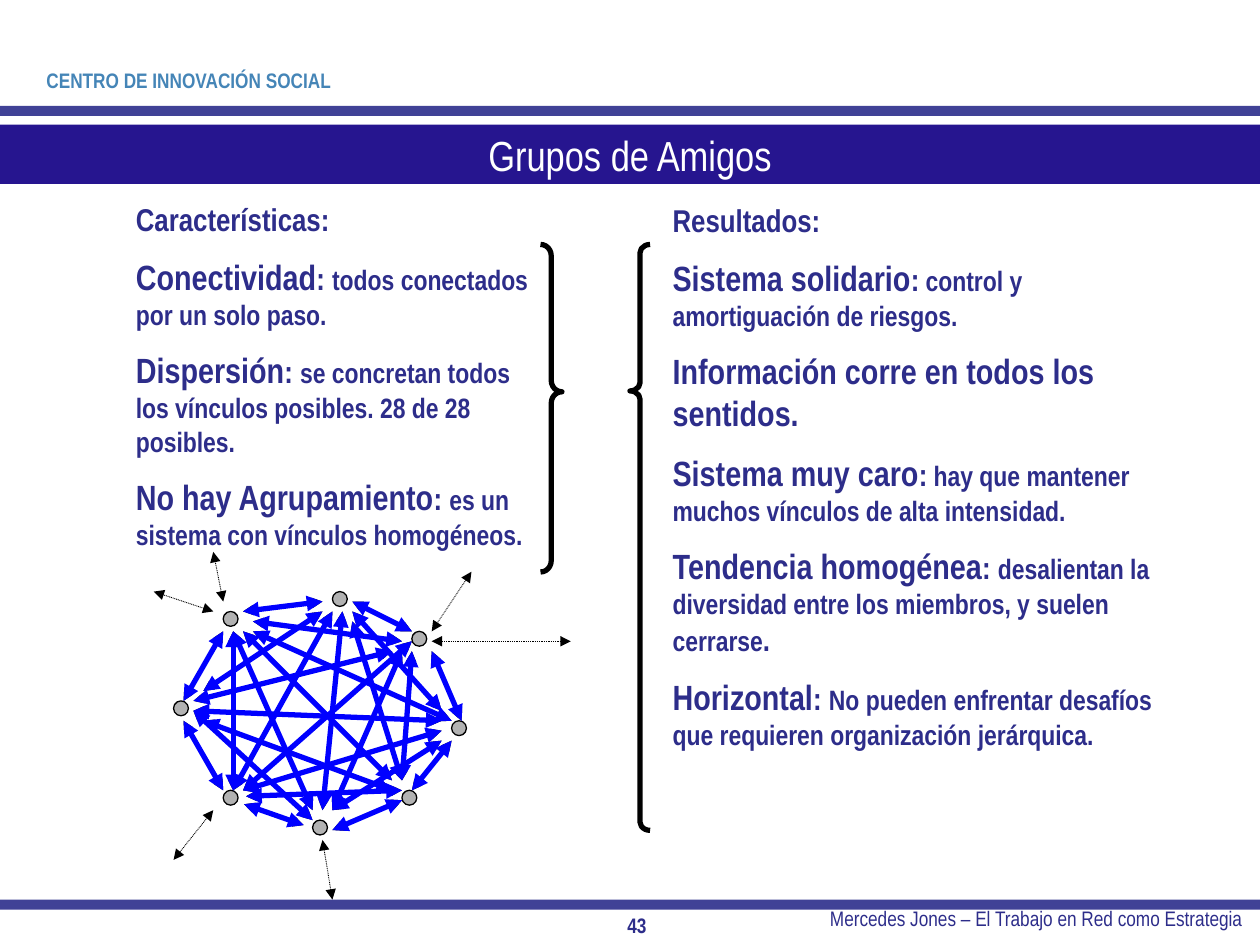
from collections import namedtuple

from lxml.etree import SubElement
from pptx import Presentation
from pptx.dml.color import RGBColor
from pptx.enum.dml import MSO_LINE
from pptx.enum.shapes import MSO_CONNECTOR, MSO_SHAPE
from pptx.enum.text import MSO_ANCHOR, MSO_AUTO_SIZE, PP_ALIGN
from pptx.oxml.ns import qn
from pptx.util import Inches, Pt

Box = namedtuple("Box", "left top width height")

UNIT = 0.1
COLUMNS, ROWS = 100, 75
NETWORK_COLUMNS, NETWORK_ROWS = 42, 35
NODE_SIZE = 1.5
FONT = "Arial Narrow"
COLORS = {
    "rule": "404296",
    "brand": "4585B7",
    "banner": "26158F",
    "text": "2D2D8A",
    "white": "FFFFFF",
    "node": "B2B2B2",
    "black": "000000",
    "link": "0000FF",
}

FEATURES = [
    [("Características:", 18)],
    [("Conectividad", 20), (": ", 18), ("todos conectados por un solo paso.", 16)],
    [("Dispersión", 20), (": ", 18),
     ("se concretan todos los vínculos posibles. 28 de 28 posibles.", 16)],
    [("No hay Agrupamiento", 20), (": ", 18),
     ("es un sistema con vínculos homogéneos.", 16)],
]
RESULTS = [
    [("Resultados:", 18)],
    [("Sistema solidario", 20), (":", 18),
     (" control y amortiguación de riesgos.", 16)],
    [("Información corre en todos los sentidos.", 20)],
    [("Sistema muy caro", 20), (":", 18),
     (" hay que mantener muchos vínculos de alta intensidad.", 16)],
    [("Tendencia homogénea", 20), (": ", 18),
     ("desalientan la diversidad entre los miembros, y suelen cerrarse", 16),
     (".", 18)],
    [("Horizontal", 20), (": ", 18),
     ("No pueden enfrentar desafíos que requieren organización jerárquica.", 16)],
]

NODES = [(7, 6), (26, 8), (18, 4), (2, 15), (16, 27), (25, 24), (30, 17), (7, 24)]
LINKS = [
    (8, 24, 18, 6), (7, 24, 3, 17), (8, 8, 8, 24), (15.1, 27.5, 9.1, 25.4),
    (25, 25, 18, 28), (9, 24, 26, 9), (29, 18, 9, 24), (17, 5, 9, 6),
    (25, 24, 9.3, 24.6), (3, 15, 7, 8), (20, 5, 26, 8), (30, 19, 26, 24),
    (28, 10, 31, 17), (4, 16, 16, 27), (29, 19, 18, 26), (25, 10, 18, 26),
    (8, 8, 16, 26), (19, 6, 17, 26), (17, 6, 5, 14), (24, 10, 4, 15),
    (24, 23, 9, 8), (24, 24, 5, 17), (29, 17, 4, 16), (26, 10, 25, 23),
    (30, 17, 10, 8), (25, 9, 10, 7), (20, 7, 25, 23), (29, 16, 20, 6),
]
OUTSIDE_LINKS = [
    (32, 2, 28, 8), (6, 26, 2, 31), (6, 6, 0, 4), (6, 0, 7, 5),
    (18, 35, 17, 29), (42, 9, 28, 9),
]


def color(name):
    return RGBColor.from_string(COLORS[name])


def grid(*lengths):
    return [Inches(length * UNIT) for length in lengths]


def add_figure(page, kind, box, fill=None, line=None, weight=0.75):
    figure = page.shapes.add_shape(kind, *grid(*box))
    figure.shadow.inherit = False
    if fill:
        figure.fill.solid()
        figure.fill.fore_color.rgb = color(fill)
    else:
        figure.fill.background()
    if line:
        figure.line.color.rgb = color(line)
        figure.line.width = Pt(weight)
    else:
        figure.line.fill.background()
    return figure


def write(frame, paragraphs, ink="text", bold=False, align=PP_ALIGN.LEFT,
          anchor=MSO_ANCHOR.TOP):
    frame.word_wrap = True
    frame.vertical_anchor = anchor
    for index, runs in enumerate(paragraphs):
        para = frame.add_paragraph() if index else frame.paragraphs[0]
        para.alignment = align
        if index:
            para.space_before = Pt(10)
        para.font.name = FONT
        para.font.bold = bold
        para.font.color.rgb = color(ink)
        sizes = {size for _, size in runs}
        if len(sizes) == 1:
            para.font.size = Pt(sizes.pop())
        for words, size in runs:
            span = para.add_run()
            span.text = words
            if para.font.size is None:
                span.font.size = Pt(size)


def add_label(page, box, paragraphs, **style):
    frame = page.shapes.add_textbox(*grid(*box)).text_frame
    write(frame, paragraphs, **style)
    return frame


def add_column(page, box, paragraphs):
    frame = add_label(page, box, paragraphs, bold=True)
    frame.auto_size = MSO_AUTO_SIZE.SHAPE_TO_FIT_TEXT


def add_brace(page, kind, box, curl, tip):
    brace = add_figure(page, kind, box, line="black", weight=3)
    brace.adjustments[0] = curl
    brace.adjustments[1] = tip


def add_arrow(page, ends, ink, weight, dash=None):
    arrow = page.shapes.add_connector(MSO_CONNECTOR.STRAIGHT, *grid(*ends))
    arrow.line.color.rgb = color(ink)
    arrow.line.width = Pt(weight)
    if dash:
        arrow.line.dash_style = dash
    properties = arrow._element.spPr
    outline = properties.find(qn("a:ln"))
    for end in ("a:headEnd", "a:tailEnd"):
        SubElement(outline, qn(end), type="triangle")
    SubElement(properties, qn("a:effectLst"))


def add_network(page, box):
    across = box.width / NETWORK_COLUMNS
    down = box.height / NETWORK_ROWS

    def point(column, row):
        return box.left + column * across, box.top + row * down

    def connect(links, *style):
        for x1, y1, x2, y2 in links:
            add_arrow(page, point(x1, y1) + point(x2, y2), *style)

    for node in NODES:
        disc = Box(*point(*node), NODE_SIZE * across, NODE_SIZE * down)
        add_figure(page, MSO_SHAPE.OVAL, disc, "node", "black")
    connect(LINKS + OUTSIDE_LINKS, "black", 0.5, MSO_LINE.ROUND_DOT)
    connect(LINKS, "link", 3)


def add_header(page, box):
    add_label(page, Box(2.7, 3.6, 24.8, 5.6),
              [[("CENTRO DE INNOVACIÓN SOCIAL", 12)]],
              ink="brand", bold=True, anchor=MSO_ANCHOR.MIDDLE)
    add_figure(page, MSO_SHAPE.RECTANGLE,
               Box(box.left, box.top + 8.4, box.width, 0.8), "rule")
    banner = add_figure(page, MSO_SHAPE.RECTANGLE,
                        Box(box.left, box.top + 9.9, box.width, 4.7), "banner")
    write(banner.text_frame, [[("Grupos de Amigos", 24)]], ink="white",
          align=PP_ALIGN.CENTER, anchor=MSO_ANCHOR.MIDDLE)


def add_footer(page, box):
    add_figure(page, MSO_SHAPE.RECTANGLE, Box(*box[:3], 0.8), "rule")
    add_label(page, Box(box.left + 53.1, box.top, 46.5, 3.9),
              [[("Mercedes Jones – El Trabajo en Red como Estrategia", 12)]],
              align=PP_ALIGN.RIGHT)
    add_label(page, Box(box.left + 48.4, box.top + 0.5, 4.3, 3.1),
              [[("43", 12)]], bold=True, align=PP_ALIGN.CENTER,
              anchor=MSO_ANCHOR.MIDDLE)


def main():
    deck = Presentation()
    deck.slide_width, deck.slide_height = grid(COLUMNS, ROWS)
    page = deck.slides.add_slide(deck.slide_layouts[6])
    add_header(page, Box(0, 0, COLUMNS, 14.6))
    add_column(page, Box(52.4, 15.5, 41.7, 46.4), RESULTS)
    add_brace(page, MSO_SHAPE.LEFT_BRACE, Box(50, 19.4, 1.6, 46.5), 0.41, 0.25)
    add_brace(page, MSO_SHAPE.RIGHT_BRACE, Box(42.9, 19.4, 1.7, 26), 0.53, 0.45)
    add_column(page, Box(9.8, 15.4, 34.6, 30), FEATURES)
    add_network(page, Box(12.2, 43.8, 33.1, 27.6))
    add_footer(page, Box(0, 71.4, COLUMNS, 3.6))
    deck.save("out.pptx")


if __name__ == "__main__":
    main()
